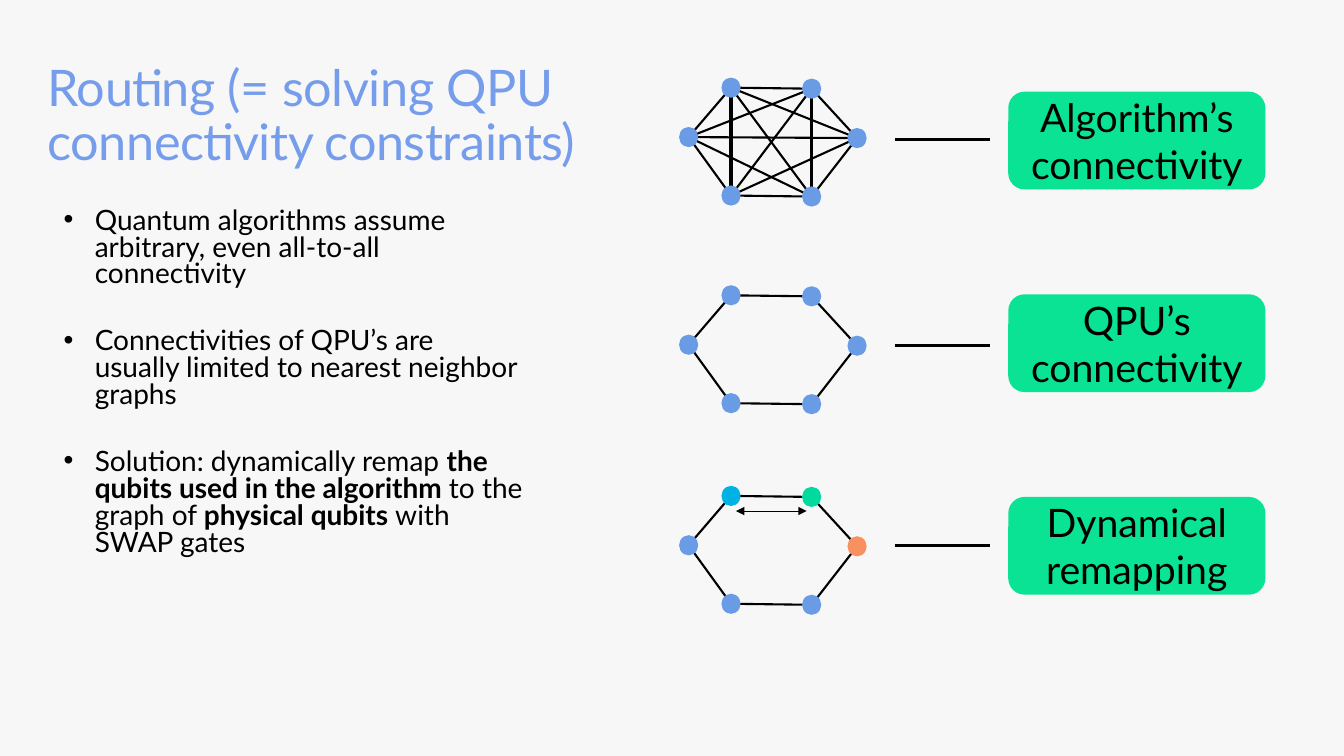
"""Build the slide on routing under QPU connectivity constraints."""
from dataclasses import dataclass
from itertools import combinations
from typing import NamedTuple

from lxml.etree import SubElement
from pptx import Presentation
from pptx.dml.color import RGBColor as RGB
from pptx.enum.shapes import MSO_CONNECTOR as CONN, MSO_SHAPE as SHAPE
from pptx.enum.text import MSO_ANCHOR as ANCHOR, MSO_AUTO_SIZE as FIT, PP_ALIGN as ALIGN
from pptx.oxml.ns import qn
from pptx.shapes.connector import Connector
from pptx.slide import Slide
from pptx.util import Inches, Pt


@dataclass(frozen=True)
class Theme:
    font: str = "Lato"
    background: str = "F7F7F7"
    title: str = "759DEB"
    ink: str = "000000"
    label: str = "0AE394"
    node: str = "699CE5"
    swap_from: str = "00B1E3"
    swap_to: str = "02D99F"
    neighbor: str = "F7915F"
    title_size: float = 36
    body_size: float = 20
    label_size: float = 28
    edge: float = 1.5
    heavy: float = 2.25
    thin: float = 0.5


class Point(NamedTuple):
    x: float
    y: float


class Span(NamedTuple):
    text: str
    bold: bool = False


@dataclass(frozen=True)
class Row:
    label: str
    graph_top: float
    leader_y: float
    edges: list[tuple[int, int]]
    colors: list[str]


THEME = Theme()
NODE_W, NODE_H = 0.19, 0.2
NODES = [Point(6.83, 0.59), Point(7.25, 0.1), Point(8.05, 0.11),
         Point(8.5, 0.6), Point(8.05, 1.18), Point(7.25, 1.17)]
RING = [(i, (i + 1) % len(NODES)) for i in range(len(NODES))]
ALL_TO_ALL = list(combinations(range(len(NODES)), 2))
BLUE = [THEME.node] * len(NODES)
REMAPPED = [THEME.node, THEME.swap_from, THEME.swap_to, THEME.neighbor, THEME.node, THEME.node]
ROWS = [
    Row("Algorithm’s connectivity", 0.77, 1.38, ALL_TO_ALL, BLUE),
    Row("QPU’s connectivity", 2.83, 3.43, RING, BLUE),
    Row("Dynamical remapping", 4.82, 5.41, RING, REMAPPED),
]
LABEL_TOP, LABEL_STEP = 0.91, 2.01
BULLETS = [
    [Span("Quantum algorithms assume arbitrary, even all-to-all connectivity")],
    [Span("Connectivities of QPU’s are usually limited to nearest neighbor graphs")],
    [Span("Solution: dynamically remap "), Span("the qubits used in the algorithm ", True),
     Span("to the graph of "), Span("physical qubits ", True), Span("with SWAP gates")],
]


def style_run(r, size: float, color: str, bold: bool = False) -> None:
    """Apply font, size, colour and weight to a run."""
    r.font.name = THEME.font
    r.font.size = Pt(size)
    r.font.bold = bold
    r.font.color.rgb = RGB.from_string(color)


def place(sp, left: float, top: float, width: float, height: float) -> None:
    """Move and resize a placeholder, with its text starting at the top."""
    sp.left, sp.top, sp.width, sp.height = map(Inches, (left, top, width, height))
    sp.text_frame.word_wrap = True
    sp.text_frame.auto_size = FIT.NONE
    sp.text_frame.vertical_anchor = ANCHOR.TOP


def add_title(s: Slide) -> None:
    """Fill the title placeholder."""
    sp = s.shapes.title
    place(sp, 0.37, 0.57, 6.07, 1.49)
    sp.text_frame.text = "Routing (= solving QPU connectivity constraints)"
    p = sp.text_frame.paragraphs[0]
    p.alignment = ALIGN.LEFT
    p.line_spacing = 0.9
    r = p.runs[0]
    style_run(r, THEME.title_size, THEME.title)
    r.font._element.set("spc", "-30")


def add_bullets(s: Slide) -> None:
    """Fill the body placeholder with the bullet list."""
    sp = s.placeholders[1]
    place(sp, 0.03, 2.02, 5.28, 3.83)
    tf = sp.text_frame
    for i, spans in enumerate(BULLETS):
        p = tf.add_paragraph() if i else tf.paragraphs[0]
        pr = p._p.get_or_add_pPr()
        pr.set("marL", str(Inches(0.81)))
        pr.set("indent", str(Inches(-0.31)))
        p.font.size = Pt(THEME.body_size)
        p.line_spacing = 0.8
        p.space_before = Pt(28.6 if i else 0)
        for span in spans:
            r = p.add_run()
            r.text = span.text
            style_run(r, THEME.body_size, THEME.ink, span.bold)


def add_line(s: Slide, a: Point, b: Point, width: float, arrows: bool = False) -> Connector:
    """Draw a straight line, with an arrowhead at both ends if asked."""
    ends = map(Inches, (a.x, a.y, b.x, b.y))
    c = s.shapes.add_connector(CONN.STRAIGHT, *ends)
    c.line.color.rgb = RGB.from_string(THEME.ink)
    c.line.width = Pt(width)
    if arrows:
        for end in ("a:headEnd", "a:tailEnd"):
            SubElement(c.line._ln, qn(end), type="triangle")
    SubElement(c._element.spPr, qn("a:effectLst"))
    return c


def add_filled(s: Slide, kind: SHAPE, box: tuple[float, float, float, float], color: str):
    """Draw a filled shape without outline or shadow."""
    sp = s.shapes.add_shape(kind, *map(Inches, box))
    sp.shadow.inherit = False
    sp.fill.solid()
    sp.fill.fore_color.rgb = RGB.from_string(color)
    sp.line.fill.background()
    return sp


def add_graph(s: Slide, row: Row) -> None:
    """Draw the edges of a qubit graph and its nodes above them."""
    nodes = [Point(n.x, n.y + row.graph_top) for n in NODES]
    for i, j in row.edges:
        a, b = nodes[i], nodes[j]
        add_line(s, a, b, THEME.heavy if a.x == b.x else THEME.edge)
    for n, color in zip(nodes, row.colors):
        box = (n.x - NODE_W / 2, n.y - NODE_H / 2, NODE_W, NODE_H)
        add_filled(s, SHAPE.OVAL, box, color)


def add_label(s: Slide, row: Row, top: float) -> None:
    """Draw the leader line and the rounded label of a row."""
    add_line(s, Point(8.88, row.leader_y), Point(9.82, row.leader_y), THEME.heavy)
    sp = add_filled(s, SHAPE.ROUNDED_RECTANGLE, (10, top, 2.55, 0.97), THEME.label)
    tf = sp.text_frame
    tf.text = row.label
    tf.word_wrap = True
    tf.vertical_anchor = ANCHOR.MIDDLE
    p = tf.paragraphs[0]
    p.alignment = ALIGN.CENTER
    style_run(p.runs[0], THEME.label_size, THEME.ink)


def main() -> None:
    """Build and save the presentation."""
    prs = Presentation()
    prs.slide_width, prs.slide_height = Inches(13.33), Inches(7.5)
    s = prs.slides.add_slide(prs.slide_layouts[1])
    s.background.fill.solid()
    s.background.fill.fore_color.rgb = RGB.from_string(THEME.background)
    add_title(s)
    add_bullets(s)
    for i, row in enumerate(ROWS):
        add_graph(s, row)
        add_label(s, row, LABEL_TOP + i * LABEL_STEP)
    add_line(s, Point(7.3, 5.07), Point(8, 5.07), THEME.thin, arrows=True)
    prs.save("out.pptx")


if __name__ == "__main__":
    main()
